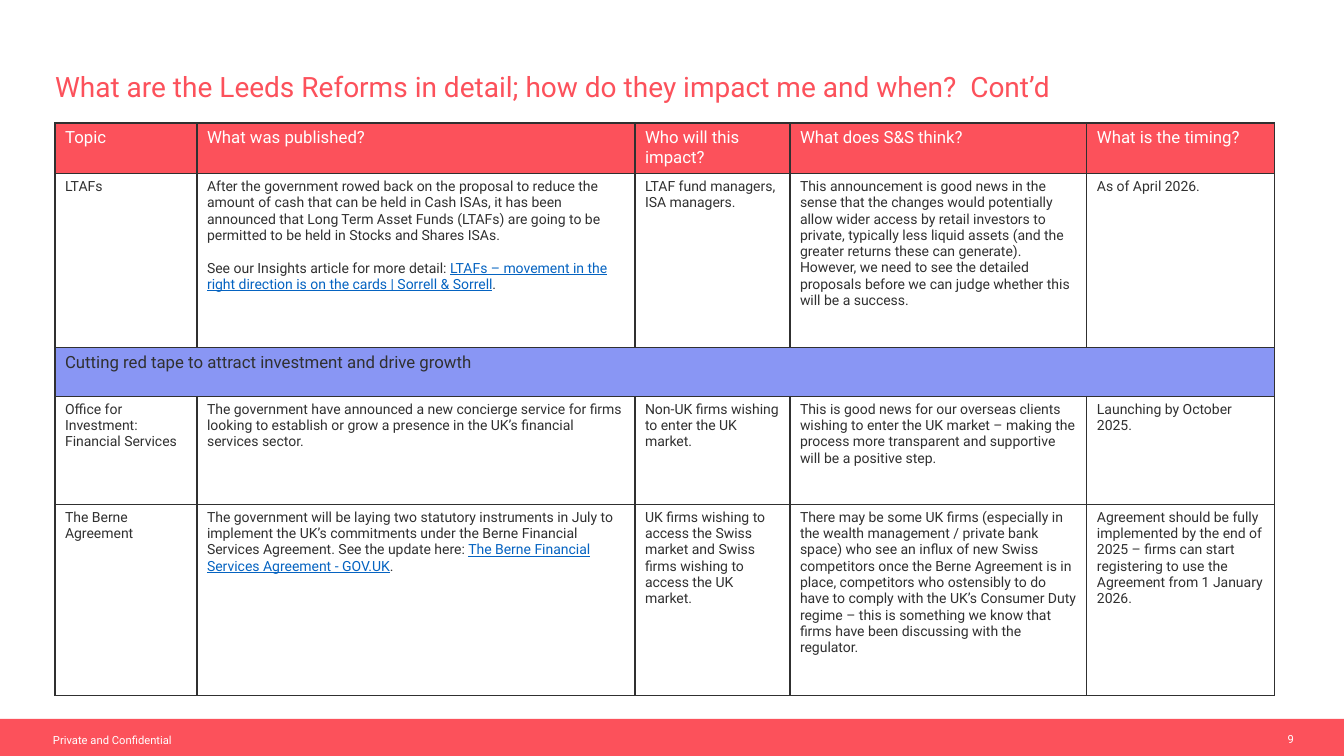
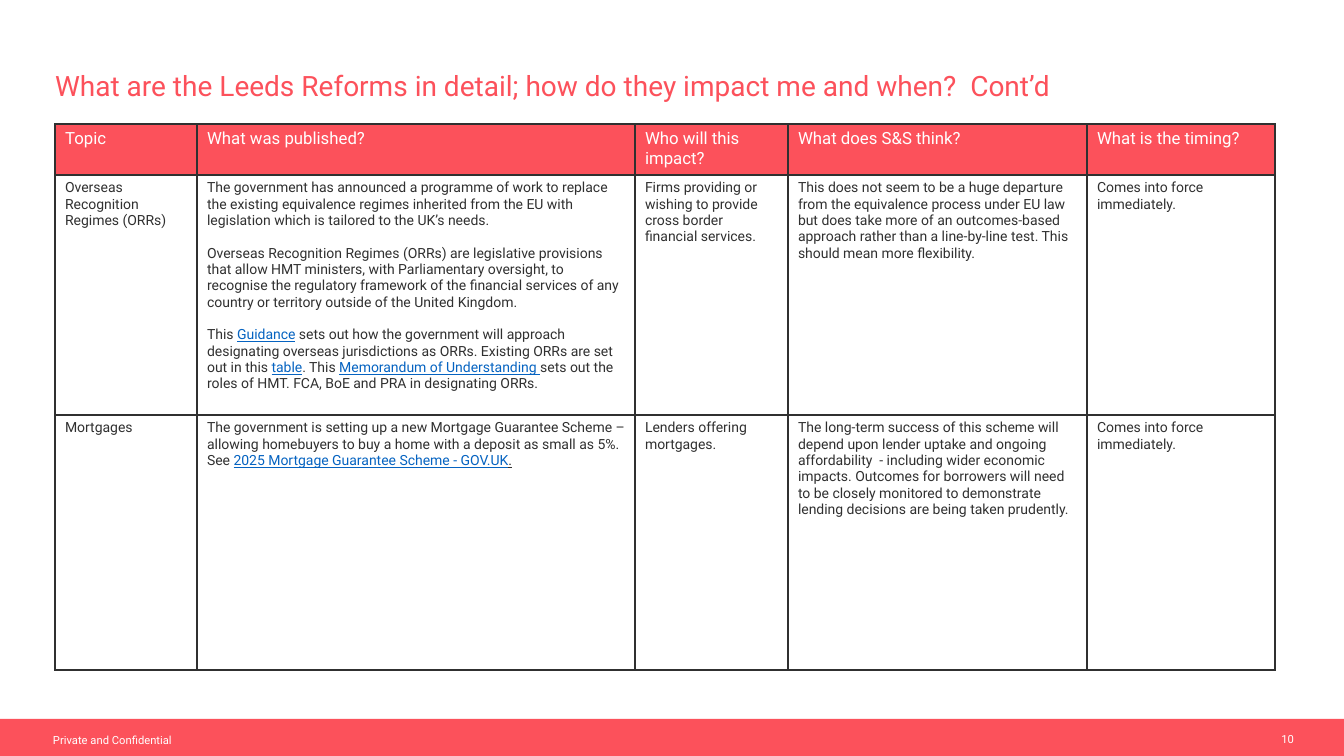
from dataclasses import dataclass

from lxml import etree
from pptx import Presentation
from pptx import util as u
from pptx.dml.color import RGBColor
from pptx.enum import shapes, text
from pptx.oxml.ns import qn

EMU_PER_PX = 914400 / 100.8
PAGE_WIDTH, PAGE_HEIGHT = 1344, 756
FONT = "Roboto"
CORAL, PERIWINKLE, INK, LINK_BLUE, WHITE = "FC515B", "8996F4", "303030", "0563C1", "FFFFFF"
TITLE = "What are the Leeds Reforms in detail; how do they impact me and when?  Cont’d"
HEADINGS = ["Topic", "What was published?", "Who will this impact?",
            "What does S&S think?", "What is the timing?"]


@dataclass
class Span:
    """A piece of a paragraph with its own colour or underline."""
    text: str
    color: str = LINK_BLUE
    underline: bool = True


REFORMS = [
    ["LTAFs",
     [["After the government rowed back on the proposal to reduce the amount of cash that can be "
       "held in Cash ISAs, it has been announced that Long Term Asset Funds (LTAFs) are going to "
       "be permitted to be held in Stocks and Shares ISAs."],
      ["See our Insights article for more detail: ",
       Span("LTAFs – movement in the right direction is on the cards | Sorrell & Sorrell"), "."]],
     "LTAF fund managers, ISA managers.",
     "This announcement is good news in the sense that the changes would potentially allow wider "
     "access by retail investors to private, typically less liquid assets (and the greater "
     "returns these can generate). However, we need to see the detailed proposals before we can "
     "judge whether this will be a success.",
     "As of April 2026."],
    ["Cutting red tape to attract investment and drive growth"],
    ["Office for Investment: Financial Services",
     "The government have announced a new concierge service for firms looking to establish or "
     "grow a presence in the UK’s financial services sector.",
     "Non-UK firms wishing to enter the UK market.",
     "This is good news for our overseas clients wishing to enter the UK market – making the "
     "process more transparent and supportive will be a positive step.",
     "Launching by October 2025."],
    ["The Berne Agreement",
     [["The government will be laying two statutory instruments in July to implement the UK’s "
       "commitments under the Berne Financial Services Agreement. See the update here: ",
       Span("The Berne Financial Services Agreement - GOV.UK"), "."]],
     "UK firms wishing to access the Swiss market and Swiss firms wishing to access the UK market.",
     "There may be some UK firms (especially in the wealth management / private bank space) who "
     "see an influx of new Swiss competitors once the Berne Agreement is in place, competitors "
     "who ostensibly to do have to comply with the UK’s Consumer Duty regime – this is something "
     "we know that firms have been discussing with the regulator.",
     "Agreement should be fully implemented by the end of 2025 – firms can start registering to "
     "use the Agreement from 1 January 2026."],
]

RECOGNITION_AND_MORTGAGES = [
    ["Overseas Recognition Regimes (ORRs)",
     [["The government has announced a programme of work to replace the existing equivalence "
       "regimes inherited from the EU with legislation which is tailored to the UK’s needs."],
      ["Overseas Recognition Regimes (ORRs) are legislative provisions that allow HMT ministers, "
       "with Parliamentary oversight, to recognise the regulatory framework of the financial "
       "services of any country or territory outside of the United Kingdom."],
      ["This ", Span("Guidance"),
       " sets out how the government will approach designating overseas jurisdictions as ORRs. "
       "Existing ORRs are set out in this ", Span("table"), ". This ",
       Span("Memorandum of Understanding "),
       "sets out the roles of HMT. FCA, BoE and PRA in designating ORRs."]],
     "Firms providing or wishing to provide cross border financial services.",
     "This does not seem to be a huge departure from the equivalence process under EU law but "
     "does take more of an outcomes-based approach rather than a line-by-line test. This should "
     "mean more flexibility.",
     "Comes into force immediately."],
    ["Mortgages",
     [["The government is setting up a new Mortgage Guarantee Scheme – allowing homebuyers to buy "
       "a home with a deposit as small as 5%. See ",
       Span("2025 Mortgage Guarantee Scheme - GOV.UK"), Span(".", INK)]],
     "Lenders offering mortgages.",
     "The long-term success of this scheme will depend upon lender uptake and ongoing "
     "affordability  - including wider economic impacts. Outcomes for borrowers will need to be "
     "closely monitored to demonstrate lending decisions are being taken prudently.",
     "Comes into force immediately."],
]


def px(length):
    """Turn px into EMU."""
    return u.Emu(round(length * EMU_PER_PX))


def rgb(value):
    """Turn a hex string into a colour."""
    return RGBColor.from_string(value)


def style(font, size, color, underline=None):
    """Apply the deck's typeface with a size, colour and underline."""
    font.name, font.size, font.bold = FONT, u.Pt(size), False
    font.color.rgb = rgb(color)
    font.underline = underline


def write(frame, paragraphs, size, color):
    """Fill a text frame with paragraphs made of strings and spans, one line apart."""
    for index, pieces in enumerate(paragraphs):
        para = frame.add_paragraph() if index else frame.paragraphs[0]
        if index:
            para.space_before = u.Pt(size * 1.17)
        for piece in pieces:
            span = piece if isinstance(piece, Span) else Span(piece, color, None)
            run = para.add_run()
            run.text = span.text
            style(run.font, size, span.color, span.underline)


def add_title(page, box):
    """Place the slide title in its placeholder."""
    title = page.shapes.title
    title.left, title.top, title.width, title.height = map(px, box)
    frame = title.text_frame
    frame.text = TITLE
    frame.auto_size = text.MSO_AUTO_SIZE.NONE
    frame.vertical_anchor = text.MSO_ANCHOR.TOP
    frame.margin_left = 0
    frame.margin_right = frame.margin_top = frame.margin_bottom = px(5)
    para = frame.paragraphs[0]
    para.alignment = text.PP_ALIGN.LEFT
    style(para.runs[0].font, 20, CORAL)


def add_footer_text(page, box, words, alignment):
    """Place a small white text on the footer band."""
    frame = page.shapes.add_textbox(*map(px, box)).text_frame
    frame.word_wrap = True
    frame.margin_left = frame.margin_right = frame.margin_top = frame.margin_bottom = 0
    frame.vertical_anchor = text.MSO_ANCHOR.MIDDLE
    frame.text = words
    para = frame.paragraphs[0]
    para.alignment = alignment
    style(para.runs[0].font, 8, WHITE)


def add_footer(page, box, number):
    """Draw the footer band with the confidentiality line and page number."""
    left, top, width, height = box
    band = page.shapes.add_shape(shapes.MSO_SHAPE.RECTANGLE, *map(px, box))
    band.shadow.inherit = False
    band.fill.solid()
    band.fill.fore_color.rgb = rgb(CORAL)
    band.line.fill.background()
    add_footer_text(page, (left + 53, top + 15, 190, 13), "Private and Confidential",
                    text.PP_ALIGN.LEFT)
    add_footer_text(page, (left + width - 96, top + 5, 46, 29), str(number),
                    text.PP_ALIGN.RIGHT)


def format_cell(cell, fill):
    """Give a cell thin dark borders and an optional fill."""
    properties = cell._tc.get_or_add_tcPr()
    for side in ("a:lnL", "a:lnR", "a:lnT", "a:lnB"):
        line = etree.SubElement(properties, qn(side), w=str(u.Pt(1)))
        solid = etree.SubElement(line, qn("a:solidFill"))
        etree.SubElement(solid, qn("a:srgbClr"), val=INK)
    if fill:
        cell.fill.solid()
        cell.fill.fore_color.rgb = rgb(fill)
    else:
        cell.fill.background()


def add_reform_table(page, origin, widths, heights, entries):
    """Build the reform table; an entry with one text becomes a section row."""
    rows = [HEADINGS, *entries]
    frame = page.shapes.add_table(len(rows), len(widths), *map(px, origin),
                                  px(sum(widths)), px(sum(heights)))
    table = frame.table
    table.horz_banding = False
    for column, width in zip(table.columns, widths):
        column.width = px(width)
    for index, (row, height, entry) in enumerate(zip(table.rows, heights, rows)):
        row.height = px(height)
        is_section = len(entry) == 1
        fill = CORAL if index == 0 else PERIWINKLE if is_section else None
        size = 12 if fill else 10
        color = WHITE if index == 0 else INK
        for cell in row.cells:
            format_cell(cell, fill)
        if is_section:
            table.cell(index, 0).merge(table.cell(index, len(widths) - 1))
        for cell, content in zip(row.cells, entry):
            paragraphs = [[content]] if isinstance(content, str) else content
            write(cell.text_frame, paragraphs, size, color)
        if is_section:
            table.cell(index, 0).text_frame.paragraphs[0].alignment = text.PP_ALIGN.JUSTIFY


def add_reform_page(deck, number, title_top, table_top, widths, heights, entries):
    """Add one slide with title, reform table and footer."""
    page = deck.slides.add_slide(deck.slide_layouts[5])
    add_footer(page, (0, 719, PAGE_WIDTH, 37), number)
    add_title(page, (55, title_top, 1232, 44))
    add_reform_table(page, (55, table_top), widths, heights, entries)


def main():
    """Build and save the deck."""
    deck = Presentation()
    deck.slide_width, deck.slide_height = px(PAGE_WIDTH), px(PAGE_HEIGHT)
    add_reform_page(deck, 9, 64, 123, [142, 438, 155, 297, 188],
                    [49, 174, 49, 108, 191], REFORMS)
    add_reform_page(deck, 10, 63, 124, [142, 438, 153, 299, 188],
                    [51, 240, 255], RECOGNITION_AND_MORTGAGES)
    deck.save("out.pptx")


if __name__ == "__main__":
    main()
